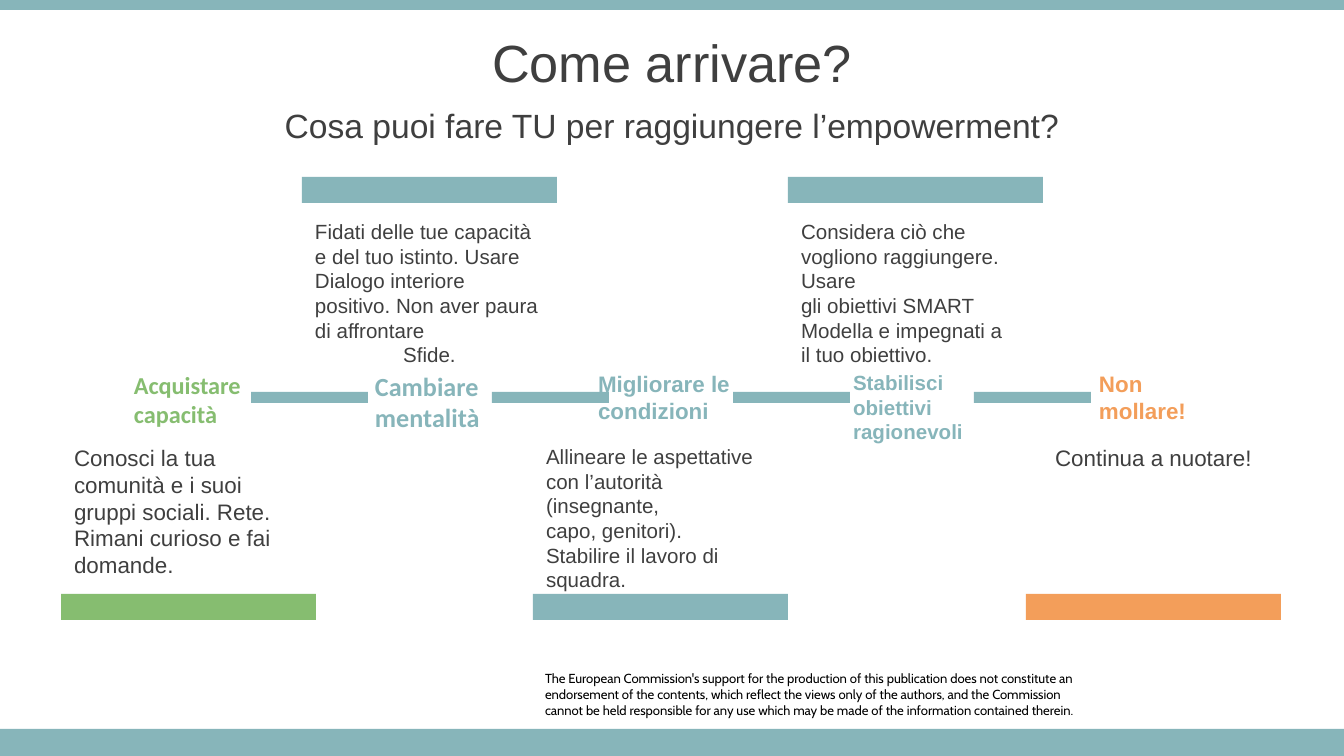
from pptx import Presentation, util as u
from pptx.dml.color import RGBColor
from pptx.enum import shapes, text

PX = 914400 / 134.4
TEAL = RGBColor(0x87, 0xB5, 0xBA)
GREEN = RGBColor(0x86, 0xBD, 0x70)
ORANGE = RGBColor(0xF3, 0x9E, 0x5A)
GREY = RGBColor(0x3F, 0x3F, 0x3F)
BLACK = RGBColor(0, 0, 0)
LEFT, CENTER = text.PP_ALIGN.LEFT, text.PP_ALIGN.CENTER


def px(*lengths):
    return [u.Emu(round(n * PX)) for n in lengths]


def add_text(lines, at, size, font="Arial", color=GREY, bold=False,
             aligns=(LEFT,), anchor=text.MSO_ANCHOR.TOP, inset=(13, 7)):
    frame = slide.shapes.add_textbox(*px(*at)).text_frame
    frame.word_wrap = True
    frame.vertical_anchor = anchor
    frame.margin_left = frame.margin_right = px(inset[0])[0]
    frame.margin_top = frame.margin_bottom = px(inset[1])[0]
    frame.text = lines
    for i, line in enumerate(frame.paragraphs):
        line.alignment = aligns[min(i, len(aligns) - 1)]
        for run in line.runs:
            run.font.size, run.font.name = u.Pt(size), font
            run.font.bold, run.font.color.rgb = bold, color


deck = Presentation()
deck.slide_width, deck.slide_height = px(1344, 756)
slide = deck.slides.add_slide(deck.slide_layouts[6])

# Disclaimer
add_text("The European Commission's support for the production of this publication "
         "does not constitute an endorsement of the contents, which reflect the views "
         "only of the authors, and the Commission\n"
         "cannot be held responsible for any use which may be made of the information "
         "contained therein.",
         (545, 671, 560, 47), 7, font="Cabin", color=BLACK, inset=(0, 0))

# Steps: card left, card above the line, colour, card size, card text and
# alignment, heading left, heading width, heading size, heading font, heading
steps = [
    (61, False, GREEN, 12,
     "Conosci la tua comunità e i suoi gruppi sociali. Rete. Rimani curioso e fai domande.",
     (LEFT,), 121, 136, 13, "Calibri", "Acquistare\vcapacità"),
    (302, True, TEAL, 11,
     "Fidati delle tue capacità e del tuo istinto. Usare\vDialogo interiore positivo. "
     "Non aver paura di affrontare\nSfide.",
     (LEFT, CENTER), 362, 136, 14, "Calibri", "Cambiare\vmentalità"),
    (533, False, TEAL, 11,
     "Allineare le aspettative con l’autorità (insegnante,\vcapo, genitori).\v"
     "Stabilire il lavoro di squadra.",
     (LEFT,), 585, 172, 12, "Arial", "Migliorare le condizioni"),
    (788, True, TEAL, 11,
     "Considera ciò che\vvogliono raggiungere. Usare\vgli obiettivi SMART\v"
     "Modella e impegnati a\vil tuo obiettivo.",
     (LEFT,), 840, 148, 11, "Arial", "Stabilisci obiettivi ragionevoli"),
    (1026, False, ORANGE, 12, "Continua a nuotare!",
     (CENTER,), 1086, 136, 12, "Arial", "Non mollare!"),
]

# Slide edges, links between steps and card bars
bars = [((0, 729, 1344, 27), TEAL), ((0, 0, 1344, 10), TEAL)]
bars += [((251 + 241 * i, 392, 117, 11), TEAL) for i in range(4)]
bars += [((left, 177 if above else 594, 255, 26), color)
         for left, above, color, *_ in steps]
for at, color in bars:
    bar = slide.shapes.add_shape(shapes.MSO_SHAPE.RECTANGLE, *px(*at))
    bar.shadow.inherit = False
    bar.fill.solid()
    bar.fill.fore_color.rgb = color
    bar.line.fill.background()

# Title and subtitle
for line, at, size in [
    ("Come arrivare?", (0, 19, 1344, 85), 28),
    ("Cosa puoi fare TU per raggiungere l’empowerment?", (0, 104, 1344, 42), 18),
]:
    add_text(line, at, size, aligns=(CENTER,), anchor=text.MSO_ANCHOR.MIDDLE)

# Headings and card texts
for (left, above, color, size, card, aligns,
     head_left, head_width, head_size, head_font, heading) in steps:
    add_text(heading, (head_left, 363, head_width, 100), head_size,
             font=head_font, color=color, bold=True)
    add_text(card, (left, 212 if above else 437, 255, 165), size, aligns=aligns)

deck.save("out.pptx")
